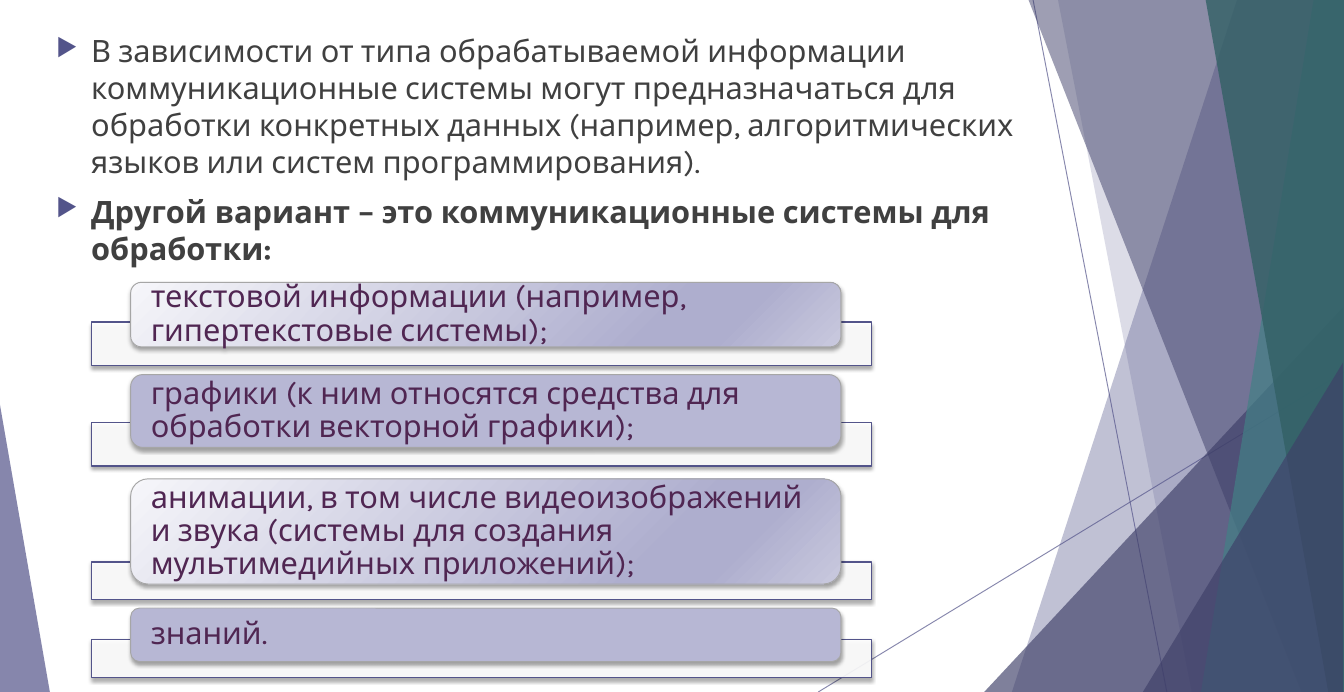
"""Build a slide on kinds of communication systems, with four raised answer cards."""
from dataclasses import dataclass
from typing import Any, Optional

import lxml.etree
import pptx
import pptx.dml.color
import pptx.enum.shapes
import pptx.enum.text
import pptx.oxml.ns
import pptx.util

SHAPES = pptx.enum.shapes.MSO_SHAPE
qn = pptx.oxml.ns.qn


@dataclass(frozen=True)
class Theme:
    indigo: str = "53548A"
    dusk: str = "3E3F68"
    teal: str = "438086"
    pine: str = "326065"
    body: str = "404040"
    plum: str = "502652"
    white: str = "FFFFFF"
    black: str = "000000"
    rim: str = "A6A6A6"
    lilac: str = "B7B7D4"
    sheen: tuple = ((0, "F6F6FA"), (74, "AEAECE"), (83, "AEAECE"), (100, "C9C9DE"))
    font: str = "Karla"
    size: int = 24


@dataclass(frozen=True)
class Ray:
    start: tuple[float, float]
    end: tuple[float, float]


@dataclass(frozen=True)
class Blade:
    top_x: float
    bottom_x: float
    color: str
    opacity: int


@dataclass(frozen=True)
class Corner:
    left: float
    top: float
    width: float
    apex: float
    color: str
    opacity: int


@dataclass(frozen=True)
class Card:
    wording: str
    top: float
    height: float
    shelf_top: float
    shelf_height: float
    glossy: bool


THEME = Theme()
WIDTH, HEIGHT = pptx.util.Inches(14.57), pptx.util.Inches(7.5)
SHELF_LEFT, SHELF_WIDTH = 6.83, 58
CARD_LEFT, CARD_WIDTH = 9.72, 52.85

RAYS = [Ray((76.87, 0), (86.82, 100)), Ray((100, 53.73), (60.88, 100))]
DECOR = [
    Blade(92.04, 75.29, THEME.indigo, 36),
    Blade(78.72, 88.68, THEME.indigo, 20),
    Corner(73.23, 44.4, 26.7, 1, THEME.dusk, 66),
    Blade(76.53, 96.84, THEME.dusk, 50),
    Blade(97.74, 89.36, THEME.teal, 70),
    Blade(89.71, 98.83, THEME.pine, 80),
    Corner(85.04, 52.4, 14.89, 1, THEME.dusk, 66),
    Corner(0, 58.53, 3.71, 0, THEME.indigo, 70),
]
THESES = [
    ("В зависимости от типа обрабатываемой информации коммуникационные системы могут "
     "предназначаться для обработки конкретных данных (например, алгоритмических языков "
     "или систем программирования).", False),
    ("Другой вариант – это коммуникационные системы для обработки:", True),
]
CARDS = [
    Card("текстовой информации (например, гипертекстовые системы);",
         40.8, 9.33, 46.53, 6.27, True),
    Card("графики (к ним относятся средства для обработки векторной графики);",
         54.13, 10.53, 61.07, 6.27, False),
    Card("анимации, в том числе видеоизображений и звука (системы для создания "
         "мультимедийных приложений);", 69.2, 15.2, 81.2, 5.47, True),
    Card("знаний.", 87.87, 7.73, 92.4, 5.47, False),
]


def across(share: float) -> int:
    return round(WIDTH * share / 100)


def down(share: float) -> int:
    return round(HEIGHT * share / 100)


def rgb(color: str) -> Any:
    return pptx.dml.color.RGBColor.from_string(color)


def apply(target: Any, values: dict[str, Any]) -> None:
    for name, value in values.items():
        setattr(target, name, value)


def add_xml(parent: Any, tag: str, **attributes: Any) -> Any:
    return lxml.etree.SubElement(
        parent, qn(tag), {name: str(value) for name, value in attributes.items()})


def set_opacity(parent: Any, percent: int) -> None:
    for color in parent.iter(qn("a:srgbClr")):
        add_xml(color, "a:alpha", val=percent * 1000)


def paint(shape: Any, color: str, opacity: int = 100) -> None:
    shape.shadow.inherit = False
    shape.fill.solid()
    shape.fill.fore_color.rgb = rgb(color)
    shape.line.fill.background()
    if opacity < 100:
        set_opacity(shape.element.spPr, opacity)


def add_sheen(shape: Any) -> None:
    shape.fill.gradient()
    shape.fill.gradient_angle = 315
    stops = shape.element.spPr.find(qn("a:gradFill")).find(qn("a:gsLst"))
    stops.clear()
    for position, color in THEME.sheen:
        add_xml(add_xml(stops, "a:gs", pos=position * 1000), "a:srgbClr", val=color)


def raise_edge(shape: Any, color: str, points: float) -> None:
    shape.line.color.rgb = rgb(color)
    shape.line.width = pptx.util.Pt(points)
    effects = shape.element.spPr.find(qn("a:effectLst"))
    shadow = add_xml(effects, "a:outerShdw", blurRad=pptx.util.Pt(3),
                     dist=pptx.util.Pt(2), dir=5400000, rotWithShape=0)
    add_xml(shadow, "a:srgbClr", val=THEME.black)
    set_opacity(shadow, 35)


def write(paragraph: Any, wording: str, color: str, bold: Optional[bool] = None) -> None:
    run = paragraph.add_run()
    run.text = wording
    apply(run.font, {"name": THEME.font, "size": pptx.util.Pt(THEME.size), "bold": bold})
    run.font.color.rgb = rgb(color)
    paragraph.alignment = pptx.enum.text.PP_ALIGN.LEFT


def draw_ray(shapes: Any, ray: Ray) -> None:
    line = shapes.add_connector(
        pptx.enum.shapes.MSO_CONNECTOR.STRAIGHT, across(ray.start[0]), down(ray.start[1]),
        across(ray.end[0]), down(ray.end[1]))
    line.line.color.rgb = rgb(THEME.indigo)
    line.line.width = pptx.util.Pt(0.75)
    set_opacity(line.element.spPr, 70)
    add_xml(line.element.spPr, "a:effectLst")


def draw_decor(shapes: Any, part: Blade | Corner) -> None:
    if isinstance(part, Blade):
        outline = shapes.build_freeform(across(part.top_x), 0)
        outline.add_line_segments(
            [(WIDTH, 0), (WIDTH, HEIGHT), (across(part.bottom_x), HEIGHT)], close=True)
        shape = outline.convert_to_shape()
    else:
        shape = shapes.add_shape(SHAPES.ISOSCELES_TRIANGLE, across(part.left), down(part.top),
                                 across(part.width), down(100 - part.top))
        shape.adjustments[0] = part.apex
    paint(shape, part.color, part.opacity)


def draw_theses(shapes: Any) -> None:
    frame = shapes.add_textbox(across(3.5), down(4), across(73.23), down(21.87)).text_frame
    frame.word_wrap = True
    for index, (wording, bold) in enumerate(THESES):
        paragraph = frame.add_paragraph() if index else frame.paragraphs[0]
        write(paragraph, wording, THEME.body, bold)
        paragraph.space_before = pptx.util.Pt(10)
        props = paragraph._p.get_or_add_pPr()
        indent = pptx.util.Inches(0.38)
        props.set("marL", str(indent))
        props.set("indent", str(-indent))
        add_xml(add_xml(props, "a:buClr"), "a:srgbClr", val=THEME.indigo)
        add_xml(props, "a:buSzPct", val=80000)
        add_xml(props, "a:buChar", char="▶")


def draw_card(shapes: Any, card: Card) -> None:
    shelf = shapes.add_shape(SHAPES.RECTANGLE, across(SHELF_LEFT), down(card.shelf_top),
                             across(SHELF_WIDTH), down(card.shelf_height))
    paint(shelf, THEME.white, 90)
    raise_edge(shelf, THEME.indigo, 1)
    plate = shapes.add_shape(SHAPES.ROUNDED_RECTANGLE, across(CARD_LEFT), down(card.top),
                             across(CARD_WIDTH), down(card.height))
    paint(plate, THEME.lilac)
    if card.glossy:
        add_sheen(plate)
    raise_edge(plate, THEME.rim, 0.75)
    margin = pptx.util.Inches(0.22) - round(plate.height * 0.05)
    apply(plate.text_frame, {
        "word_wrap": True, "vertical_anchor": pptx.enum.text.MSO_ANCHOR.MIDDLE,
        "margin_left": margin, "margin_right": margin, "margin_top": 0, "margin_bottom": 0})
    paragraph = plate.text_frame.paragraphs[0]
    write(paragraph, card.wording, THEME.plum)
    paragraph.line_spacing = 0.9


def main() -> None:
    deck = pptx.Presentation()
    apply(deck, {"slide_width": WIDTH, "slide_height": HEIGHT})
    shapes = deck.slides.add_slide(deck.slide_layouts[6]).shapes
    for ray in RAYS:
        draw_ray(shapes, ray)
    for part in DECOR:
        draw_decor(shapes, part)
    draw_theses(shapes)
    for card in CARDS:
        draw_card(shapes, card)
    deck.save("out.pptx")


if __name__ == "__main__":
    main()
